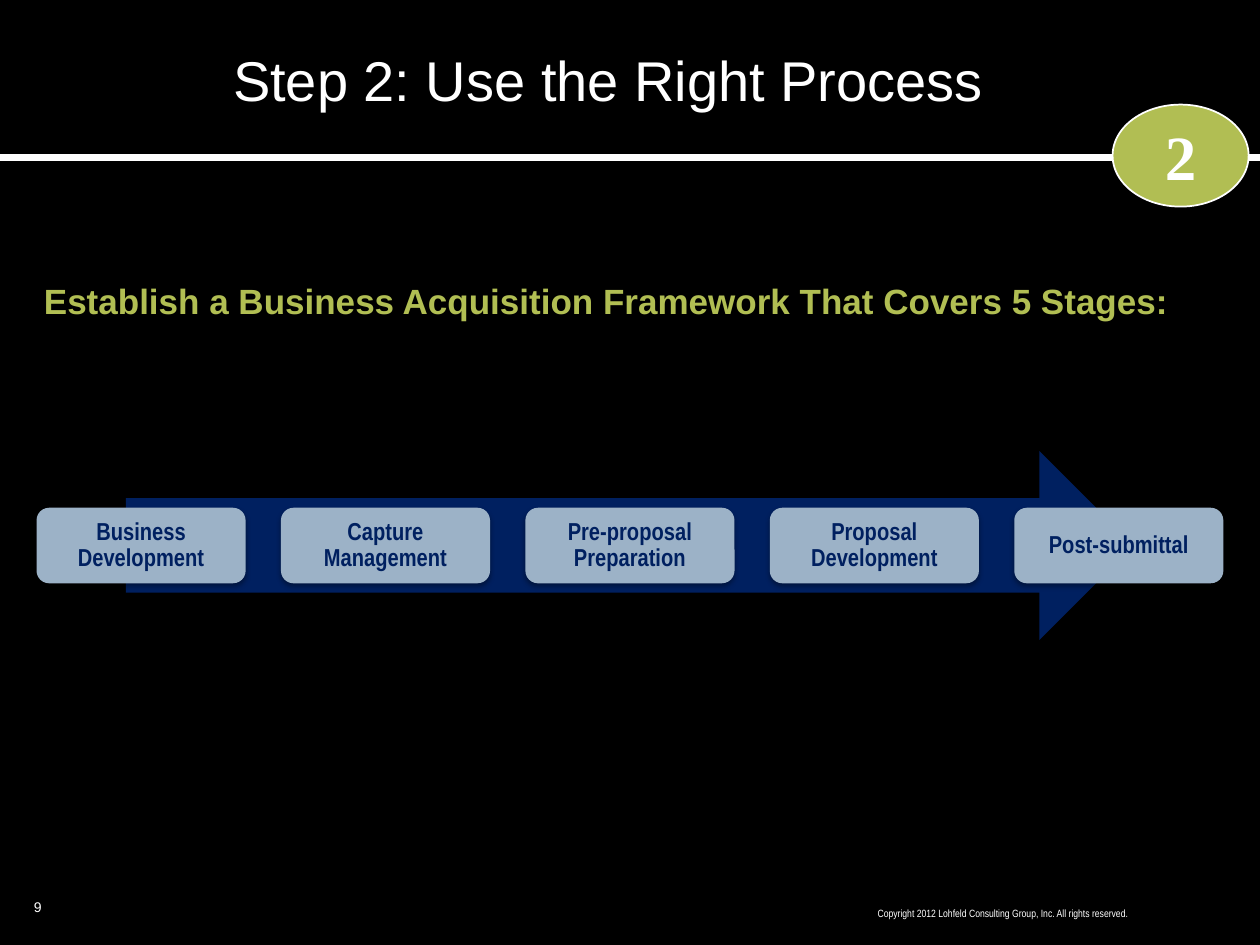
from lxml import etree
from pptx import Presentation
from pptx import util as u
from pptx.dml.color import RGBColor
from pptx.enum import shapes, text
from pptx.oxml import parse_xml
from pptx.oxml.ns import nsdecls, qn

BLACK = RGBColor(0x00, 0x00, 0x00)
WHITE = RGBColor(0xFF, 0xFF, 0xFF)
GREEN = RGBColor(0xB1, 0xBE, 0x53)
NAVY = RGBColor(0x00, 0x20, 0x60)
STEEL = RGBColor(0x9C, 0xB2, 0xC7)


def write(shape, words, size, font, color, bold=False, align=text.PP_ALIGN.LEFT):
    frame = shape.text_frame
    frame.word_wrap = True
    frame.text = words
    paragraph = frame.paragraphs[0]
    paragraph.alignment = align
    run = paragraph.runs[0]
    run.font.size = u.Pt(size)
    run.font.name = font
    run.font.color.rgb = color
    run.font.bold = bold


def add_filled(kind, left, top, width, height, color):
    shape = slide.shapes.add_shape(
        kind, u.Inches(left), u.Inches(top), u.Inches(width), u.Inches(height))
    shape.shadow.inherit = False
    shape.fill.solid()
    shape.fill.fore_color.rgb = color
    shape.line.fill.background()
    return shape


presentation = Presentation()
presentation.slide_width = u.Inches(10)
presentation.slide_height = u.Inches(7.5)
slide = presentation.slides.add_slide(presentation.slide_layouts[5])
slide.background.fill.solid()
slide.background.fill.fore_color.rgb = BLACK

rule = slide.shapes.add_connector(
    shapes.MSO_CONNECTOR.STRAIGHT, 0, u.Inches(1.25), presentation.slide_width, u.Inches(1.25))
rule.line.color.rgb = WHITE
rule.line.width = u.Pt(4.5)
etree.SubElement(rule._element.spPr, qn("a:effectLst"))

title = slide.shapes.title
title.left, title.top = u.Inches(1.75), u.Inches(0.08)
title.width, title.height = u.Inches(8.08), u.Inches(1.09)
title.text_frame.vertical_anchor = text.MSO_ANCHOR.MIDDLE
write(title, "Step 2: Use the Right Process", 32, "Arial", WHITE)

badge = add_filled(shapes.MSO_SHAPE.OVAL, 8.83, 0.83, 1.08, 0.81, GREEN)
badge.line.color.rgb = WHITE
badge.line.width = u.Pt(1)
badge.text_frame.vertical_anchor = text.MSO_ANCHOR.MIDDLE
write(badge, "2", 36, "Times New Roman", WHITE, True, text.PP_ALIGN.CENTER)

captions = [
    ((0.25, 2.17, 9.42, 0.5), "Establish a Business Acquisition Framework That Covers 5 Stages:",
     20, "Arial", GREEN, True, text.PP_ALIGN.LEFT),
    ((0.17, 7.08, 2.33, 0.33), "9", 8, "Arial", WHITE, False, text.PP_ALIGN.LEFT),
    ((6.83, 7.15, 2.22, 0.2), "Copyright 2012 Lohfeld Consulting Group, Inc. All rights reserved.",
     6, "Arial Narrow", WHITE, False, text.PP_ALIGN.RIGHT),
]
for place, *style in captions:
    box = slide.shapes.add_textbox(*(u.Inches(length) for length in place))
    write(box, *style)

add_filled(shapes.MSO_SHAPE.RIGHT_ARROW, 1, 3.58, 8, 1.5, NAVY)

stages = ["Business Development", "Capture Management", "Pre-proposal Preparation",
          "Proposal Development", "Post-submittal"]
stage_width, stage_height = 1.66, 0.6
first_left, last_left = 0.29, 8.05
pitch = (last_left - first_left) / (len(stages) - 1)
for column, name in enumerate(stages):
    stage = add_filled(shapes.MSO_SHAPE.ROUNDED_RECTANGLE,
                       first_left + column * pitch, 4.03, stage_width, stage_height, STEEL)
    frame = stage.text_frame
    frame.margin_left = frame.margin_right = u.Inches(0.03)
    frame.margin_top = frame.margin_bottom = 0
    frame.vertical_anchor = text.MSO_ANCHOR.MIDDLE
    write(stage, name, 14, "Arial Narrow", NAVY, True, text.PP_ALIGN.CENTER)
    frame.paragraphs[0].line_spacing = 0.9
    effects = stage._element.spPr.find(qn("a:effectLst"))
    effects.append(parse_xml(
        f'<a:outerShdw {nsdecls("a")} blurRad="{u.Pt(3.1)}" dist="{u.Pt(1.8)}" dir="5400000" '
        'rotWithShape="0"><a:srgbClr val="000000"><a:alpha val="35000"/></a:srgbClr></a:outerShdw>'))

presentation.save("out.pptx")
